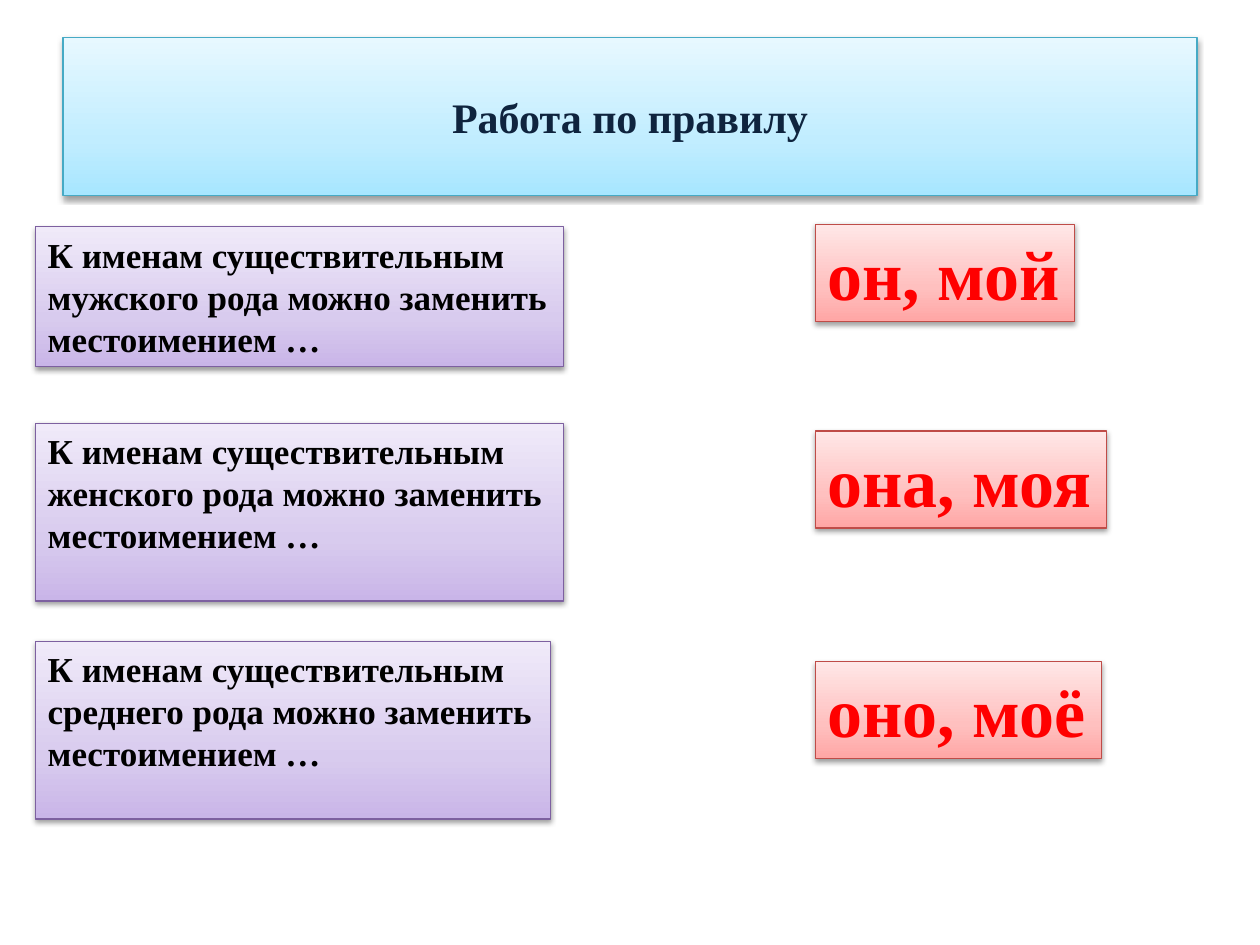
from copy import deepcopy

from lxml.etree import SubElement
from pptx import Presentation
from pptx.dml.color import RGBColor
from pptx.enum.text import MSO_ANCHOR as Anchor, MSO_AUTO_SIZE as AutoSize, PP_ALIGN as Align
from pptx.oxml.ns import qn
from pptx.util import Inches, Pt

WIDTH, HEIGHT = 10, 7.5
FONT = "Times New Roman"
STOP_POSITIONS = (0, 0.35, 1)
BLUE = ("A7E6FF", "C1EDFF", "E7F8FF"), "46AAC5"
PURPLE = ("C9B5E8", "D8CBEE", "F0EAF9"), "7D60A0"
RED = ("FFA6A5", "FFC0BF", "FFE7E7"), "BF4C48"
RULE_LEFT, ANSWER_LEFT = 0.28, 6.47
ANSWER_HEIGHT = 0.77

RULES = [
    ("мужского", 1.8, 4.19, 1.11),
    ("женского", 3.36, 4.19, 1.41),
    ("среднего", 5.09, 4.09, 1.41),
]
ANSWERS = [
    ("он, мой", 1.78, 2.06),
    ("она, моя", 3.42, 2.31),
    ("оно, моё", 5.25, 2.27),
]


def color(value):
    return RGBColor.from_string(value)


def add_shadow(shape):
    shape.shadow.inherit = False
    effects = shape._element.spPr.find(qn("a:effectLst"))
    shadow = SubElement(effects, qn("a:outerShdw"), blurRad="40000", dist="20000",
                        dir="5400000", rotWithShape="0")
    black = SubElement(shadow, qn("a:srgbClr"), val="000000")
    SubElement(black, qn("a:alpha"), val="38000")


def paint(shape, theme):
    shades, outline = theme
    fill = shape.fill
    fill.gradient()
    fill.gradient_angle = 90
    stop_list = shape._element.spPr.find(f".//{qn('a:gsLst')}")
    stop_list.append(deepcopy(stop_list[-1]))
    for stop, position, shade in zip(fill.gradient_stops, STOP_POSITIONS, shades):
        stop.position = position
        stop.color.rgb = color(shade)
    shape.line.color.rgb = color(outline)
    shape.line.width = Pt(0.75)
    add_shadow(shape)


def write(shape, text, size, text_color):
    shape.text_frame.text = text
    paragraph = shape.text_frame.paragraphs[0]
    font = paragraph.font
    font.name, font.size, font.bold = FONT, Pt(size), True
    font.color.rgb = color(text_color)
    return paragraph


def format_title(title):
    title.left, title.top = Inches(WIDTH * 0.05), Inches(HEIGHT * 0.04)
    title.width, title.height = Inches(WIDTH * 0.9), Inches(HEIGHT / 6)
    paint(title, BLUE)
    write(title, "Работа по правилу", 24, "0F243E").alignment = Align.CENTER
    title.text_frame.vertical_anchor = Anchor.MIDDLE


def add_box(slide, box, text, size, text_color, theme, wrap):
    shape = slide.shapes.add_textbox(*map(Inches, box))
    paint(shape, theme)
    write(shape, text, size, text_color)
    shape.text_frame.word_wrap = wrap
    shape.text_frame.auto_size = AutoSize.SHAPE_TO_FIT_TEXT


def main():
    presentation = Presentation()
    presentation.slide_width, presentation.slide_height = Inches(WIDTH), Inches(HEIGHT)
    slide = presentation.slides.add_slide(presentation.slide_layouts[5])
    format_title(slide.shapes.title)
    for gender, top, width, height in RULES:
        text = f"К именам существительным {gender} рода можно заменить местоимением …"
        add_box(slide, (RULE_LEFT, top, width, height), text, 20, "000000", PURPLE, True)
    for text, top, width in ANSWERS:
        add_box(slide, (ANSWER_LEFT, top, width, ANSWER_HEIGHT), text, 40, "FF0000", RED, False)
    presentation.save("out.pptx")


if __name__ == "__main__":
    main()
